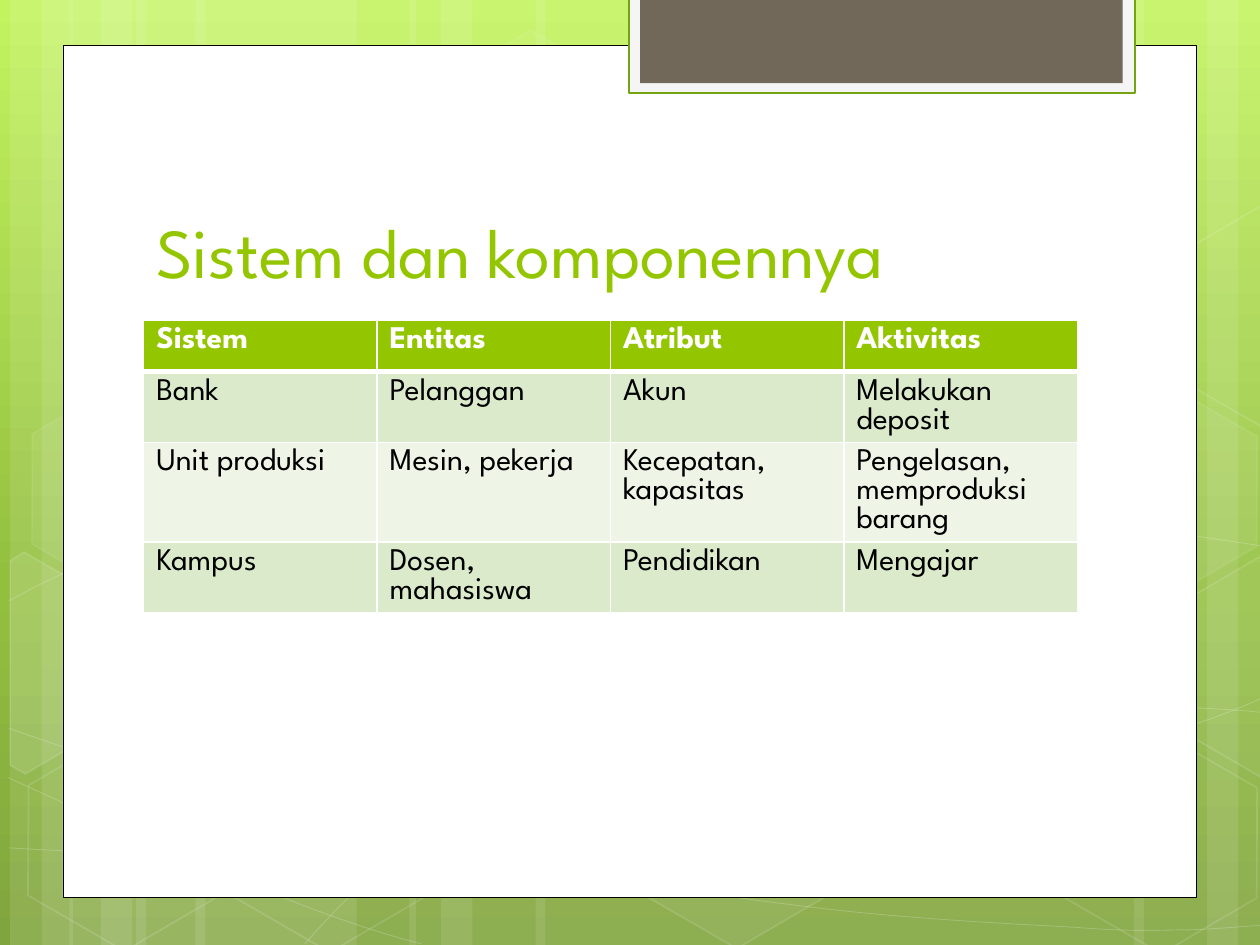
from math import cos, radians, sin
from typing import NamedTuple, Optional

from lxml import etree
from pptx import Presentation
from pptx.dml.color import RGBColor
from pptx.enum.shapes import MSO_SHAPE
from pptx.enum.text import MSO_ANCHOR, MSO_AUTO_SIZE, PP_ALIGN
from pptx.oxml.ns import qn
from pptx.util import Inches, Pt

RECTANGLE, HEXAGON = MSO_SHAPE.RECTANGLE, MSO_SHAPE.HEXAGON
BOTTOM, LEFT, NO_AUTOFIT = MSO_ANCHOR.BOTTOM, PP_ALIGN.LEFT, MSO_AUTO_SIZE.NONE

FONT = "League Spartan"
COLORS = {
    "white": "FFFFFF", "black": "000000", "lime": "94C600",
    "tab_fill": "F5F5F5", "tab_line": "74A510", "taupe": "71685A",
    "band_dark": "DCEACC", "band_light": "EEF5E7",
}
BACKGROUND_STOPS = [(0, "C3F35F"), (62, "93BF3F"), (100, "81A53E")]
SLIDE_WIDTH, SLIDE_HEIGHT = 10, 7.5
HEXAGON_WIDTH, HEXAGON_HEIGHT, TILT = 1.75, 1.52, 30


class Look(NamedTuple):
    fill: Optional[str] = None
    fill_alpha: int = 100
    line: Optional[str] = None
    line_width: float = 1
    line_alpha: int = 100


class Box(NamedTuple):
    left: float
    top: float
    width: float
    height: float
    look: Look


class Hexagon(NamedTuple):
    left: float
    top: float
    fill_alpha: int
    line_alpha: int


class CutHexagon(NamedTuple):
    center: tuple
    points: list
    fill_alpha: int


# Left and width of each translucent background stripe
STRIPES = [
    (1.08, 1.75), (0.08, 0.5), (0.33, 0.83),
    (1.55, 1.75), (0.55, 0.5), (0.8, 0.83),
    (7.33, 1.75), (9.58, 0.5), (9, 0.83),
    (4.25, 3.08), (3.25, 0.5), (3.5, 0.83),
]
# Start point, then per segment two control points and an end, or a line's end alone
CURVES = [
    [(0.07, 6.73), (0.61, 6.76, 1.15, 6.79, 1.9, 6.78), (2.65, 6.77, 3.58, 6.75, 4.58, 6.65),
     (5.58, 6.55, 7, 6.36, 7.92, 6.17), (8.83, 5.98, 9.77, 5.68, 10.07, 5.51)],
    [(0.07, 4.77), (0.36, 4.61, 0.65, 4.46, 1.21, 4.31), (1.78, 4.16, 2.59, 3.94, 3.47, 3.87),
     (4.36, 3.8, 5.44, 3.79, 6.54, 3.87), (7.64, 3.95, 9.47, 4.26, 10.07, 4.34)],
    [(0.06, 6.17), (1.27, 6.72, 2.47, 7.27, 3.34, 7.49)],
    [(0.07, 5.78), (0.38, 5.89, 0.7, 6, 1.28, 6.16), (1.86, 6.31, 2.73, 6.56, 3.57, 6.73),
     (4.4, 6.9, 5.45, 7.08, 6.28, 7.18), (7.11, 7.29, 8, 7.33, 8.53, 7.36),
     (9.05, 7.4, 9.19, 7.38, 9.45, 7.38), (9.71, 7.37, 9.89, 7.35, 10.07, 7.34)],
    [(2.42, 7.49), (2.6, 7.29, 2.78, 7.09, 3.02, 6.91), (3.26, 6.73, 3.6, 6.53, 3.88, 6.39),
     (4.16, 6.25, 4.33, 6.19, 4.7, 6.09), (5.06, 5.99, 5.73, 5.85, 6.08, 5.78),
     (6.44, 5.71, 6.49, 5.71, 6.8, 5.69), (7.11, 5.66, 7.6, 5.63, 7.94, 5.62),
     (8.29, 5.61, 8.86, 5.62, 8.86, 5.62), (9.53, 5.62),
     (9.71, 5.63, 9.88, 5.64, 9.97, 5.65), (10.06, 5.66, 10.03, 5.65, 10.06, 5.66)],
]
HONEYCOMB = [
    Hexagon(3.34, 0.36, 4, 8),
    Hexagon(4.97, 5.89, 6, 12),
    CutHexagon((0.36, 5.35), [(0.08, 4.45), (0.19, 4.38), (0.96, 4.82), (0.95, 5.7),
                              (0.2, 6.14), (0.08, 6.07)], 10),
    Hexagon(0.11, 5.91, 0, 12),
    Hexagon(0.14, 3.12, 7, 8),
    Hexagon(1.74, 5.92, 0, 12),
    Hexagon(7.53, 4.53, 10, 12),
    Hexagon(8.34, 5.93, 0, 12),
    Hexagon(8.34, 3.14, 7, 8),
    CutHexagon((9.85, 5.2), [(9.26, 4.85), (10.01, 4.41), (10.09, 4.46), (10.09, 6.13),
                             (10.02, 6.17), (9.26, 5.73)], 4),
    CutHexagon((9.85, 2.41), [(9.26, 2.07), (10.01, 1.63), (10.1, 1.68), (10.09, 3.35),
                              (10.02, 3.39), (9.26, 2.95)], 0),
]
PANELS = [
    Box(0.5, 0.36, 9, 6.76, Look("white", line="black", line_width=0.5)),
    Box(4.99, -0.02, 4.02, 0.76, Look("tab_fill", line="tab_line", line_width=1.25)),
    Box(5.08, -0.02, 3.83, 0.68, Look("taupe")),
]
SYSTEMS = [
    ["Sistem", "Entitas", "Atribut", "Aktivitas"],
    ["Bank", "Pelanggan", "Akun", "Melakukan deposit"],
    ["Unit produksi", "Mesin, pekerja", "Kecepatan, kapasitas",
     "Pengelasan, memproduksi barang"],
    ["Kampus", "Dosen, mahasiswa", "Pendidikan", "Mengajar"],
]


def rgb(name: str) -> RGBColor:
    return RGBColor.from_string(COLORS[name])


def set_attributes(target, values: dict) -> None:
    for name, value in values.items():
        setattr(target, name, value)


def paint(fill, color: Optional[str], alpha: int, owner) -> None:
    """Fill with a colour; owner is the XML element that holds the fill."""
    if color is None or alpha == 0:
        fill.background()
        return
    fill.solid()
    fill.fore_color.rgb = rgb(color)
    if alpha < 100:
        swatch = owner.find(qn("a:solidFill")).find(qn("a:srgbClr"))
        etree.SubElement(swatch, qn("a:alpha"), val=str(alpha * 1000))


def apply_look(shape, look: Look) -> None:
    properties = shape.element.spPr
    shape.shadow.inherit = False
    paint(shape.fill, look.fill, look.fill_alpha, properties)
    if look.line:
        shape.line.width = Pt(look.line_width)
    paint(shape.line.fill, look.line, look.line_alpha, properties.find(qn("a:ln")))


def add_box(slide, box: Box, preset=RECTANGLE):
    shape = slide.shapes.add_shape(preset, *map(Inches, box[:4]))
    apply_look(shape, box.look)
    return shape


def add_outline(slide, points: list, look: Look, close: bool):
    start, *rest = [(Inches(x), Inches(y)) for x, y in points]
    builder = slide.shapes.build_freeform(*start)
    builder.add_line_segments(rest, close=close)
    shape = builder.convert_to_shape()
    apply_look(shape, look)
    return shape


def add_curve(slide, curve: list) -> None:
    """Draw an outline through the anchors, then bend its cubic segments."""
    look = Look(line="white", line_width=0.5, line_alpha=20)
    shape = add_outline(slide, [segment[-2:] for segment in curve], look, close=False)
    lines = list(shape.element.iter(qn("a:lnTo")))
    for line, segment in zip(lines, curve[1:]):
        if len(segment) == 2:
            continue
        bend = etree.Element(qn("a:cubicBezTo"))
        for x, y in zip(segment[::2], segment[1::2]):
            etree.SubElement(bend, qn("a:pt"), x=str(Inches(x) - shape.left),
                             y=str(Inches(y) - shape.top))
        line.getparent().replace(line, bend)


def turn_back(point: tuple, center: tuple) -> tuple:
    """Undo the honeycomb tilt around a centre."""
    dx, dy = point[0] - center[0], point[1] - center[1]
    c, s = cos(radians(TILT)), sin(radians(TILT))
    return center[0] + c * dx + s * dy, center[1] - s * dx + c * dy


def add_honeycomb_cell(slide, cell) -> None:
    if isinstance(cell, CutHexagon):
        points = [turn_back(point, cell.center) for point in cell.points]
        hexagon = add_outline(slide, points, Look("white", cell.fill_alpha, "white", 1, 12), True)
    else:
        look = Look("white", cell.fill_alpha, "white", 1, cell.line_alpha)
        box = Box(cell.left, cell.top, HEXAGON_WIDTH, HEXAGON_HEIGHT, look)
        hexagon = add_box(slide, box, HEXAGON)
        hexagon.adjustments[0] = 0.285
    hexagon.rotation = TILT


def set_background(slide) -> None:
    fill = slide.background.fill
    fill.gradient()
    fill.gradient_angle = 270
    stops = next(slide.element.iter(qn("a:gsLst")))
    for stop in list(stops):
        stops.remove(stop)
    for percent, color in BACKGROUND_STOPS:
        stop = etree.SubElement(stops, qn("a:gs"), pos=str(percent * 1000))
        etree.SubElement(stop, qn("a:srgbClr"), val=color)


def add_title(slide, text: str) -> None:
    title = slide.shapes.title
    set_attributes(title, {"left": Inches(1.14), "top": Inches(1.12),
                           "width": Inches(7.68), "height": Inches(1.25)})
    frame = title.text_frame
    frame.text = text
    set_attributes(frame, {"vertical_anchor": BOTTOM, "auto_size": NO_AUTOFIT,
                           "word_wrap": True})
    paragraph = frame.paragraphs[0]
    paragraph.alignment = LEFT
    set_attributes(paragraph.runs[0].font, {"name": FONT, "size": Pt(40)})
    paragraph.runs[0].font.color.rgb = rgb("lime")
    # Keep the title in front of the background shapes
    slide.shapes.element.append(title.element)


def add_borders(cell, bottom_width: float) -> None:
    properties = cell._tc.get_or_add_tcPr()
    widths = {"a:lnL": 1, "a:lnR": 1, "a:lnT": 1, "a:lnB": bottom_width}
    for position, (tag, width) in enumerate(widths.items()):
        line = etree.Element(qn(tag), w=str(Pt(width)))
        fill = etree.SubElement(line, qn("a:solidFill"))
        etree.SubElement(fill, qn("a:srgbClr"), val=COLORS["white"])
        properties.insert(position, line)


def add_systems_table(slide) -> None:
    frame = slide.shapes.add_table(len(SYSTEMS), len(SYSTEMS[0]), Inches(1.14), Inches(2.54),
                                   Inches(7.41), Inches(0.41 * len(SYSTEMS)))
    for row, texts in enumerate(SYSTEMS):
        header = row == 0
        band = "lime" if header else ("band_dark" if row % 2 else "band_light")
        for column, text in enumerate(texts):
            cell = frame.table.cell(row, column)
            cell.text = text
            cell.fill.solid()
            cell.fill.fore_color.rgb = rgb(band)
            add_borders(cell, 3 if header else 1)
            font = cell.text_frame.paragraphs[0].runs[0].font
            set_attributes(font, {"name": FONT, "size": Pt(18), "bold": header})
            font.color.rgb = rgb("white" if header else "black")


def main() -> None:
    presentation = Presentation()
    set_attributes(presentation, {"slide_width": Inches(SLIDE_WIDTH),
                                  "slide_height": Inches(SLIDE_HEIGHT)})
    slide = presentation.slides.add_slide(presentation.slide_layouts[5])
    set_background(slide)
    for left, width in STRIPES:
        add_box(slide, Box(left, 0, width, SLIDE_HEIGHT, Look("white", 10)))
    for curve in CURVES:
        add_curve(slide, curve)
    for cell in HONEYCOMB:
        add_honeycomb_cell(slide, cell)
    for panel in PANELS:
        add_box(slide, panel)
    add_title(slide, "Sistem dan komponennya")
    add_systems_table(slide)
    presentation.save("out.pptx")


if __name__ == "__main__":
    main()
